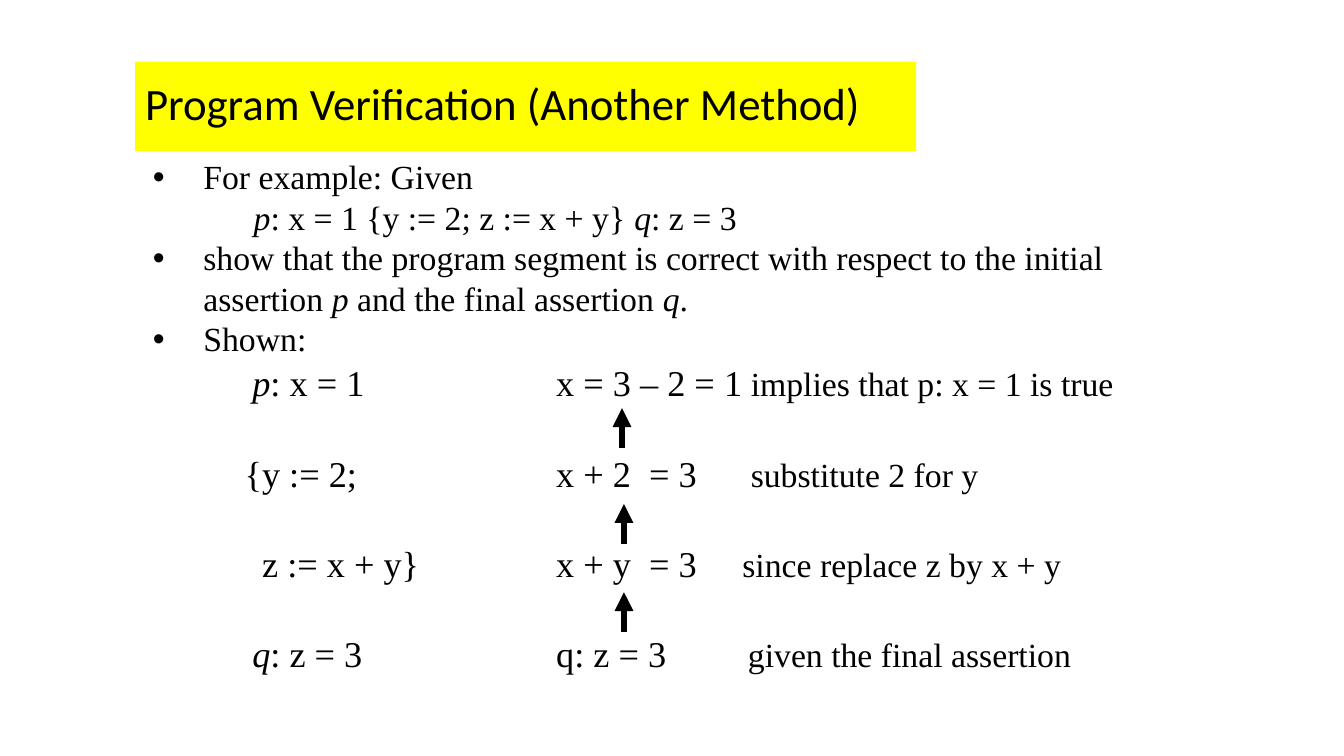
from lxml.etree import SubElement
from pptx import Presentation
from pptx.dml.color import RGBColor
from pptx.enum.shapes import MSO_CONNECTOR
from pptx.enum.text import MSO_ANCHOR
from pptx.oxml.ns import qn
from pptx.util import Pt


def color(hex_code):
    return RGBColor.from_string(hex_code)


def add_text(p, text, size=24.1, font="Times New Roman", italic=False):
    r = p.add_run()
    r.text = text
    r.font.size = Pt(size)
    r.font.name = font
    r.font.italic = italic
    r.font.color.rgb = color("000000")


prs = Presentation()
prs.slide_width, prs.slide_height = Pt(960), Pt(540)
s = prs.slides.add_slide(prs.slide_layouts[6])

title = s.shapes.add_textbox(Pt(96.5), Pt(44), Pt(558), Pt(64))
title.fill.solid()
title.fill.fore_color.rgb = color("FFFF00")
tf = title.text_frame
tf.word_wrap = True
tf.vertical_anchor = MSO_ANCHOR.MIDDLE
p = tf.paragraphs[0]
p.line_spacing = 0.9
add_text(p, "Program Verification (Another Method)", size=32, font="Calibri")

body = s.shapes.add_textbox(Pt(102.2), Pt(108), Pt(756), Pt(410))
tf = body.text_frame
tf.word_wrap = True

statements = [
    (True, ["For example: Given"]),
    (False, ["", "p", ": x = 1 {y := 2; z := x + y} ", "q", ": z = 3"]),
    (True, ["show that the program segment is correct with respect to the initial assertion",
            " p ", "and the final assertion ", "q", "."]),
    (True, ["Shown:"]),
]
for i, (bulleted, parts) in enumerate(statements):
    p = tf.add_paragraph() if i else tf.paragraphs[0]
    pPr = p._p.get_or_add_pPr()
    pPr.set("marL", str(Pt(36 if bulleted else 72)))
    pPr.set("indent", str(Pt(-36 if bulleted else 0)))
    if bulleted:
        SubElement(pPr, qn("a:buFont"), typeface="Arial")
        SubElement(pPr, qn("a:buChar"), char="•")
    for j, part in enumerate(parts):
        if part:
            add_text(p, part, italic=j % 2 == 1)

proof = [
    ("p", ": x = 1", "x = 3 – 2 = 1", "implies that p: x = 1 is true", 71, 427),
    ("", "{y := 2;", "x + 2  = 3", "substitute 2 for y", 65.5, 427),
    ("", "z := x + y}", "x + y  = 3", "since replace z by x + y", 78, 421),
    ("q", ": z = 3", "q: z = 3", "given the final assertion", 71, 425),
]
for i, (label, code, assertion, reason, code_x, reason_x) in enumerate(proof):
    p = tf.add_paragraph()
    p.line_spacing = 0.7
    p.space_before = Pt(42.7 if i else 10)
    tabs = SubElement(p._p.get_or_add_pPr(), qn("a:tabLst"))
    for x in (code_x, 288, reason_x):
        SubElement(tabs, qn("a:tab"), pos=str(Pt(x)), algn="l")
    add_text(p, "\t" + label, size=25.9, italic=True)
    add_text(p, f"{code}\t{assertion}\t", size=25.9)
    add_text(p, reason)

for x, y in [(445.7, 451.5), (445.7, 388.5), (444.3, 320)]:
    arrow = s.shapes.add_connector(MSO_CONNECTOR.STRAIGHT, Pt(x), Pt(y), Pt(x), Pt(y - 28.5))
    arrow.line.color.rgb = color("000000")
    arrow.line.width = Pt(4.5)
    SubElement(arrow.line._get_or_add_ln(), qn("a:tailEnd"), type="triangle")
    SubElement(arrow._element.spPr, qn("a:effectLst"))

prs.save("out.pptx")
